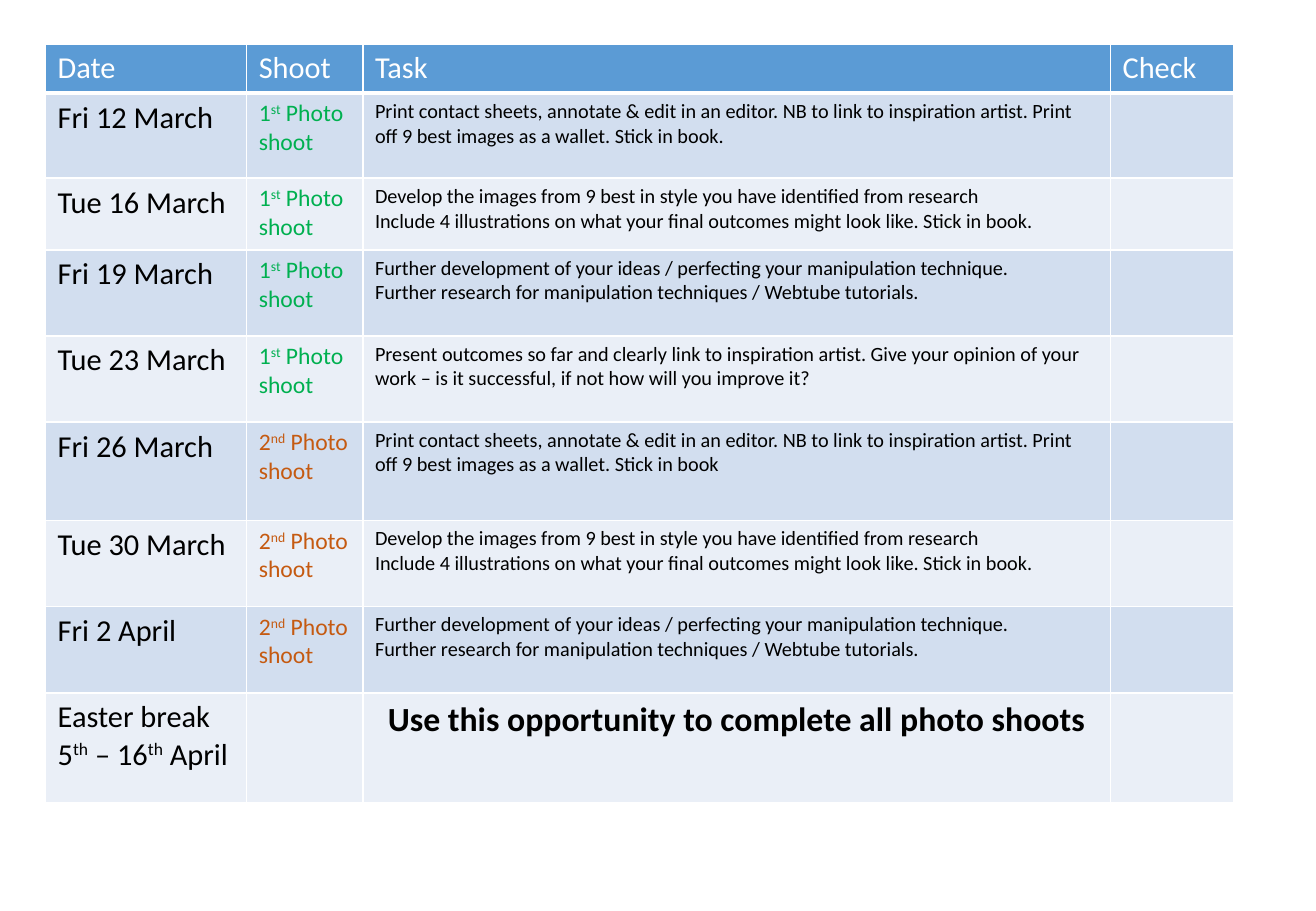
from lxml.etree import SubElement
from pptx import Presentation
from pptx.dml.color import RGBColor
from pptx.enum.text import PP_ALIGN
from pptx.oxml.ns import qn
from pptx.util import Pt

WHITE = RGBColor(0xFF, 0xFF, 0xFF)
BLACK = RGBColor(0x00, 0x00, 0x00)
HEADER_BLUE = RGBColor(0x5B, 0x9B, 0xD5)
BAND_DARK = RGBColor(0xD2, 0xDE, 0xEF)
BAND_LIGHT = RGBColor(0xEA, 0xEF, 0xF7)
FIRST_GREEN = RGBColor(0x00, 0xB0, 0x50)
SECOND_ORANGE = RGBColor(0xC5, 0x5A, 0x11)

# Schedule content: text between ^ marks is superscript
HEADINGS = ["Date", "Shoot", "Task", "Check"]
FIRST_SHOOT = ("1^st^ Photo shoot", FIRST_GREEN)
SECOND_SHOOT = ("2^nd^ Photo shoot", SECOND_ORANGE)
PRINT = ("Print contact sheets, annotate & edit in an editor. NB to link to "
         "inspiration artist. Print off 9 best images as a wallet. Stick in book")
DEVELOP = ("Develop the images from 9 best in style you have identified from research\n"
           "Include 4 illustrations on what your final outcomes might look like. "
           "Stick in book.")
FURTHER = ("Further development of your ideas / perfecting your manipulation technique.\n"
           "Further research for manipulation techniques / Webtube tutorials.")
PRESENT = ("Present outcomes so far and clearly link to inspiration artist. Give your "
           "opinion of your work – is it successful, if not how will you improve it?")
SESSIONS = [
    ("Fri 12 March", FIRST_SHOOT, PRINT + "."),
    ("Tue 16 March", FIRST_SHOOT, DEVELOP),
    ("Fri 19 March", FIRST_SHOOT, FURTHER),
    ("Tue 23 March", FIRST_SHOOT, PRESENT),
    ("Fri 26 March", SECOND_SHOOT, PRINT),
    ("Tue 30 March", SECOND_SHOOT, DEVELOP),
    ("Fri 2 April", SECOND_SHOOT, FURTHER),
]
EASTER = "Easter break\n5^th^ – 16^th^ April"
EASTER_TASK = "Use this opportunity to complete all photo shoots"

COLUMN_WIDTHS = [119.2, 68.9, 443.1, 73]
ROW_HEIGHTS = [29, 50.4, 42.6, 51, 51, 58.4, 51, 51.2, 64.8]


class ScheduleSlide:
    font = "Calibri"

    def __init__(self, presentation):
        self.slide = presentation.slides.add_slide(presentation.slide_layouts[6])

    def table(self, left, top, widths, heights):
        frame = self.slide.shapes.add_table(
            len(heights), len(widths), Pt(left), Pt(top),
            Pt(sum(widths)), Pt(sum(heights)))
        for column, width in zip(frame.table.columns, widths):
            column.width = Pt(width)
        for row, height in zip(frame.table.rows, heights):
            row.height = Pt(height)
        return frame.table

    def cell(self, cell, fill, text="", size=18, color=BLACK, bold=False,
             align=PP_ALIGN.LEFT, bottom=1):
        self.borders(cell, bottom)
        cell.fill.solid()
        cell.fill.fore_color.rgb = fill
        for index, line in enumerate(text.split("\n")):
            frame = cell.text_frame
            paragraph = frame.add_paragraph() if index else frame.paragraphs[0]
            paragraph.alignment = align
            self.runs(paragraph, line, size, color, bold)

    def runs(self, paragraph, line, size, color, bold):
        for index, piece in enumerate(line.split("^")):
            if not piece:
                continue
            run = paragraph.add_run()
            run.text = piece
            run.font.name = self.font
            run.font.size = Pt(size)
            run.font.bold = bold
            run.font.color.rgb = color
            if index % 2:
                run.font._element.set("baseline", "30000")

    def borders(self, cell, bottom):
        properties = cell._tc.get_or_add_tcPr()
        for side, width in (("L", 1), ("R", 1), ("T", 1), ("B", bottom)):
            line = SubElement(properties, qn(f"a:ln{side}"), w=str(Pt(width)))
            solid = SubElement(line, qn("a:solidFill"))
            SubElement(solid, qn("a:srgbClr"), val=str(WHITE))


def main():
    presentation = Presentation()
    presentation.slide_width = Pt(780)
    presentation.slide_height = Pt(540)
    page = ScheduleSlide(presentation)
    schedule = page.table(27, 26, COLUMN_WIDTHS, ROW_HEIGHTS)

    # Header row
    for column, heading in enumerate(HEADINGS):
        page.cell(schedule.cell(0, column), HEADER_BLUE, heading,
                  color=WHITE, bottom=3)

    # Photo shoot sessions
    for row, (date, (shoot, shoot_color), task) in enumerate(SESSIONS, start=1):
        band = BAND_DARK if row % 2 else BAND_LIGHT
        page.cell(schedule.cell(row, 0), band, date)
        page.cell(schedule.cell(row, 1), band, shoot, 14, shoot_color)
        page.cell(schedule.cell(row, 2), band, task, 12)
        page.cell(schedule.cell(row, 3), band)

    # Easter break
    last = len(SESSIONS) + 1
    page.cell(schedule.cell(last, 0), BAND_LIGHT, EASTER)
    page.cell(schedule.cell(last, 1), BAND_LIGHT)
    page.cell(schedule.cell(last, 2), BAND_LIGHT, EASTER_TASK, 20, bold=True,
              align=PP_ALIGN.CENTER)
    page.cell(schedule.cell(last, 3), BAND_LIGHT)

    presentation.save("out.pptx")


if __name__ == "__main__":
    main()
